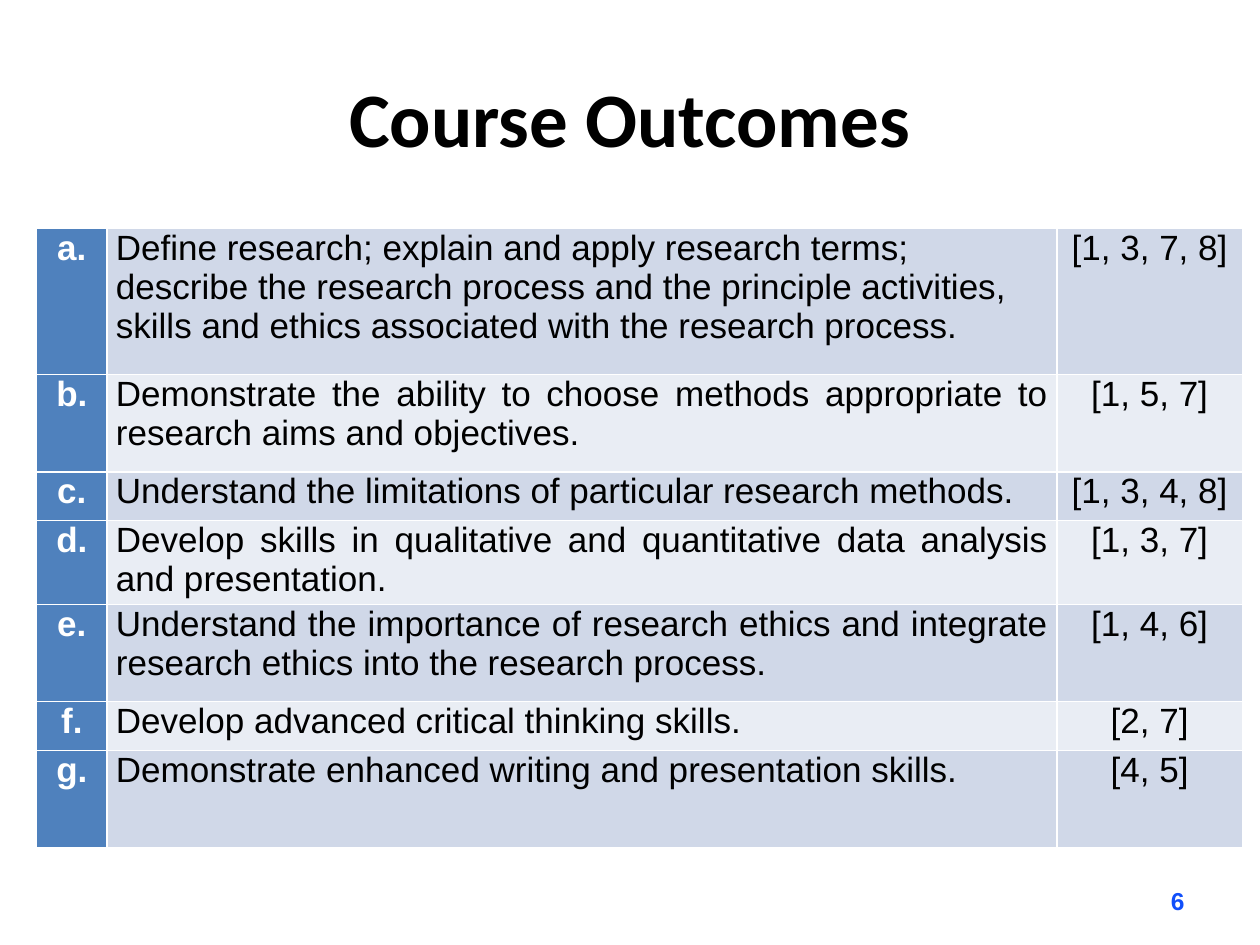
from lxml import etree
from pptx import Presentation
from pptx.dml.color import RGBColor
from pptx.enum.text import MSO_ANCHOR, PP_ALIGN
from pptx.oxml.ns import qn
from pptx.util import Inches, Pt

LEFT, CENTER, RIGHT, JUSTIFY = (
    PP_ALIGN.LEFT, PP_ALIGN.CENTER, PP_ALIGN.RIGHT, PP_ALIGN.JUSTIFY)
MIDDLE = MSO_ANCHOR.MIDDLE

BLACK = RGBColor(0x00, 0x00, 0x00)
WHITE = RGBColor(0xFF, 0xFF, 0xFF)
LABEL_BLUE = RGBColor(0x4F, 0x81, 0xBD)
BANDS = (RGBColor(0xD0, 0xD8, 0xE8), RGBColor(0xE9, 0xED, 0xF4))
NUMBER_BLUE = RGBColor(0x11, 0x4F, 0xFB)

# Row height in text lines, outcome, related programme goals
OUTCOMES = [
    (3, "Define research; explain and apply research terms; describe the "
        "research process and the principle activities, skills and ethics "
        "associated with the research process.", "[1, 3, 7, 8]"),
    (2, "Demonstrate the ability to choose methods appropriate to research "
        "aims and objectives.", "[1, 5, 7]"),
    (1, "Understand the limitations of particular research methods.",
     "[1, 3, 4, 8]"),
    (1, "Develop skills in qualitative and quantitative data analysis and "
        "presentation.", "[1, 3, 7]"),
    (2, "Understand the importance of research ethics and integrate research "
        "ethics into the research process.", "[1, 4, 6]"),
    (1, "Develop advanced critical thinking skills.", "[2, 7]"),
    (2, "Demonstrate enhanced writing and presentation skills.", "[4, 5]"),
]
COLUMN_WIDTHS = (0.56, 7.54, 1.47)
LINE_HEIGHT = 0.386


def write(frame, text, size=20, font="Arial", color=BLACK, bold=False,
          align=LEFT):
    """Put one formatted paragraph into a text frame."""
    para = frame.paragraphs[0]
    para.alignment = align
    span = para.add_run()
    span.text = text
    span.font.size = Pt(size)
    span.font.name = font
    span.font.bold = bold
    span.font.color.rgb = color


class SlideBuilder:
    """Holds the deck, the current slide and the table style."""

    border_color = WHITE
    border_width = Pt(1)
    cell_margin = Inches(0.07)

    def __init__(self, width, height):
        self.deck = Presentation()
        self.deck.slide_width = Inches(width)
        self.deck.slide_height = Inches(height)
        self.page = self.deck.slides.add_slide(self.deck.slide_layouts[6])

    def place(self, left, top, width, height):
        """Turn shares of the slide into lengths."""
        across, down = self.deck.slide_width, self.deck.slide_height
        return (int(left * across), int(top * down),
                int(width * across), int(height * down))

    def text(self, area, text, **style):
        box = self.page.shapes.add_textbox(*self.place(*area))
        box.text_frame.word_wrap = True
        box.text_frame.vertical_anchor = MIDDLE
        write(box.text_frame, text, **style)

    def table(self, area, column_widths, row_heights):
        table = self.page.shapes.add_table(
            len(row_heights), len(column_widths), *self.place(*area)).table
        table.first_row = table.horz_banding = False
        for column, width in zip(table.columns, column_widths):
            column.width = Inches(width)
        for row, height in zip(table.rows, row_heights):
            row.height = Inches(height)
        return table

    def cell(self, cell, text, fill, **style):
        cell.margin_left = cell.margin_right = self.cell_margin
        cell.margin_top = cell.margin_bottom = 0
        self.borders(cell)
        cell.fill.solid()
        cell.fill.fore_color.rgb = fill
        write(cell.text_frame, text, **style)

    def borders(self, cell):
        properties = cell._tc.get_or_add_tcPr()
        for side in ("a:lnL", "a:lnR", "a:lnT", "a:lnB"):
            line = etree.SubElement(properties, qn(side),
                                    w=str(self.border_width))
            paint = etree.SubElement(line, qn("a:solidFill"))
            etree.SubElement(paint, qn("a:srgbClr"),
                             val=str(self.border_color))


def main():
    slide = SlideBuilder(10, 7.5)

    # Title
    slide.text((0.05, 0.04, 0.9, 0.167), "Course Outcomes", size=44,
               font="Calibri", bold=True, align=CENTER)

    # Outcomes table
    heights = [lines * LINE_HEIGHT for lines, _, _ in OUTCOMES]
    table = slide.table((0.029, 0.242, 0.957, 0.62), COLUMN_WIDTHS, heights)
    for index, (_, outcome, goals) in enumerate(OUTCOMES):
        label, body, reference = table.rows[index].cells
        band = BANDS[index % 2]
        slide.cell(label, f"{'abcdefg'[index]}.", LABEL_BLUE, color=WHITE,
                   bold=True, align=CENTER)
        slide.cell(body, outcome, band, align=JUSTIFY if index else LEFT)
        slide.cell(reference, goals, band, align=CENTER)

    # Page number
    slide.text((0.717, 0.927, 0.233, 0.053), "6", size=14, color=NUMBER_BLUE,
               bold=True, align=RIGHT)

    slide.deck.save("out.pptx")


if __name__ == "__main__":
    main()
